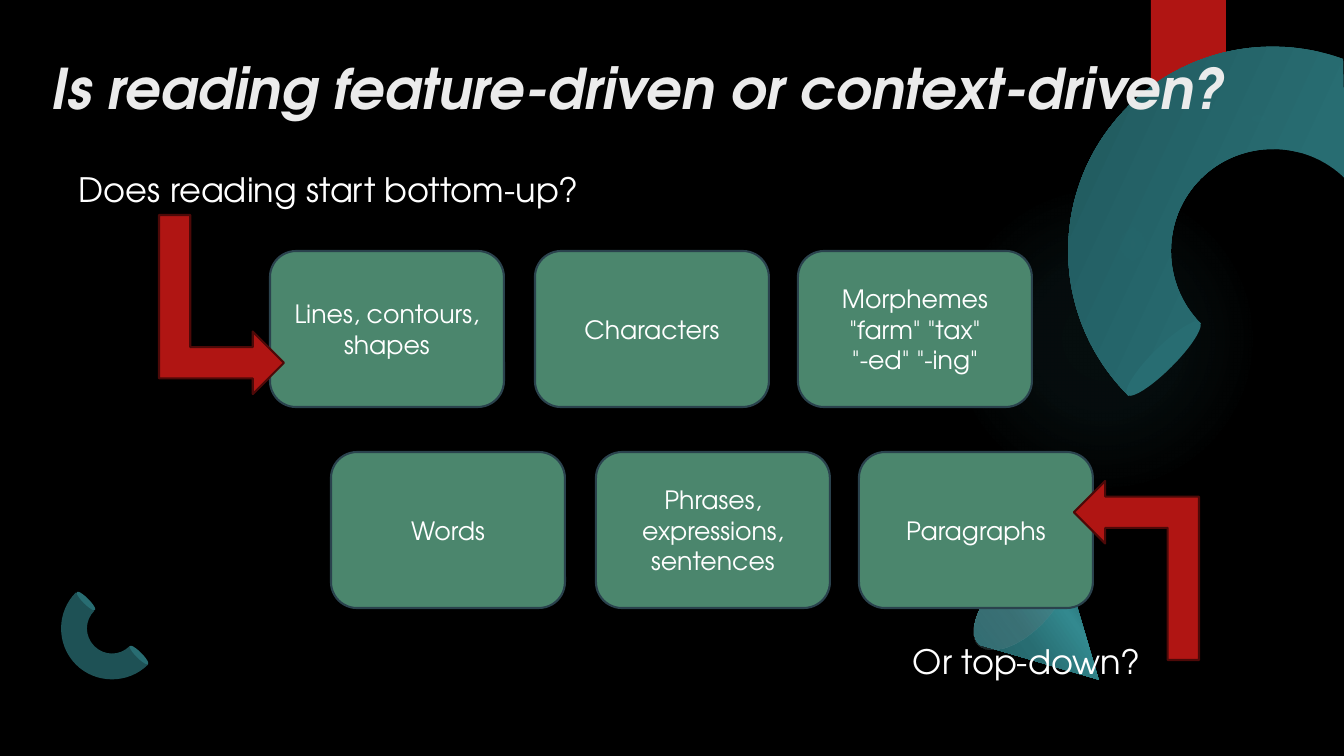
from dataclasses import dataclass
from math import cos, radians, sin, tan

from lxml import etree
from pptx import Presentation
from pptx.dml.color import RGBColor
from pptx.enum.shapes import MSO_SHAPE
from pptx.enum.text import MSO_ANCHOR, MSO_AUTO_SIZE, PP_ALIGN
from pptx.oxml import parse_xml
from pptx.oxml.ns import qn
from pptx.util import Inches, Pt

PX = Inches(1) / 100.8
OVAL, RECT = MSO_SHAPE.OVAL, MSO_SHAPE.RECTANGLE
CARD, BENT_ARROW = MSO_SHAPE.ROUNDED_RECTANGLE, MSO_SHAPE.BENT_UP_ARROW
TOP, MIDDLE = MSO_ANCHOR.TOP, MSO_ANCHOR.MIDDLE
LEFT, CENTER = PP_ALIGN.LEFT, PP_ALIGN.CENTER
NO_AUTOFIT = MSO_AUTO_SIZE.NONE
DRAWING_NS = "http://schemas.openxmlformats.org/drawingml/2006/main"


@dataclass(frozen=True)
class Theme:
    font: str = "TeX Gyre Adventor"
    title_size: int = 40
    question_size: int = 24
    card_size: int = 18
    background: str = "000000"
    title: str = "EBEBEB"
    text: str = "FFFFFF"
    card: str = "4B866D"
    card_line: str = "2A424D"
    red: str = "B01513"
    light_red: str = "ED5654"
    arrow_line: str = "4D0908"
    teal: str = "286D72"
    dark_teal: str = "1E5155"
    bright_teal: str = "33898F"
    cone_base: str = "38979E"
    glow: str = "50B9C1"
    highlight: str = "6DC5CB"


THEME = Theme()


def paint(shape, stops, angle=None, line=None, soft_edge=0):
    """Fill with (position, colour, opacity) stops: one is solid, no angle is radial."""
    colors = [
        f'<a:srgbClr val="{color}"><a:alpha val="{opacity * 1000}"/></a:srgbClr>'
        for _, color, opacity in stops
    ]
    if len(stops) == 1:
        fill = f'<a:solidFill xmlns:a="{DRAWING_NS}">{colors[0]}</a:solidFill>'
    else:
        marks = "".join(
            f'<a:gs pos="{stop[0] * 1000}">{color}</a:gs>' for stop, color in zip(stops, colors)
        )
        course = f'<a:lin ang="{(angle or 0) * 60000}" scaled="0"/>'
        if angle is None:
            course = (
                '<a:path path="circle">'
                '<a:fillToRect l="50000" t="50000" r="50000" b="50000"/></a:path>'
            )
        fill = f'<a:gradFill xmlns:a="{DRAWING_NS}"><a:gsLst>{marks}</a:gsLst>{course}</a:gradFill>'
    shape.fill.background()
    properties = shape._element.spPr
    properties.replace(properties.find(qn("a:noFill")), parse_xml(fill))
    if line:
        shape.line.color.rgb = RGBColor.from_string(line)
        shape.line.width = Pt(1.5)
    else:
        shape.line.fill.background()
    shape.shadow.inherit = False
    if soft_edge:
        effects = properties.find(qn("a:effectLst"))
        etree.SubElement(effects, qn("a:softEdge"), rad=str(round(soft_edge * PX)))


def arc(rx, ry, *angles):
    """Bezier curves around the origin through angles in degrees clockwise from the right."""
    curves = []
    for start, end in zip(map(radians, angles), map(radians, angles[1:])):
        pull = 4 / 3 * tan((end - start) / 4)
        curves.append([
            (rx * (cos(start) - pull * sin(start)), ry * (sin(start) + pull * cos(start))),
            (rx * (cos(end) + pull * sin(end)), ry * (sin(end) - pull * cos(end))),
            (rx * cos(end), ry * sin(end)),
        ])
    return curves


prs = Presentation()
prs.slide_width, prs.slide_height = round(1344 * PX), round(756 * PX)
slide = prs.slides.add_slide(prs.slide_layouts[5])
slide.background.fill.solid()
slide.background.fill.fore_color.rgb = RGBColor.from_string(THEME.background)

# Outlines start at their first point; three points make a curve, one makes a line
large_ring = [[(-204, 0)], *arc(204, 204, 180, 270, 335), [(102, 0)], *arc(102, 102, 360, 270, 180)]
small_ring = [[(51, 0)], *arc(51, 51, 0, 90, 180), [(-25, 0)], *arc(25, 25, 180, 90, 0)]
cone = [[(59, 0)], *arc(59, 30, 0, 90, 180), [(0, -109)]]

glow_stops = [(0, THEME.glow, 7), (36, THEME.glow, 6), (69, THEME.glow, 0)]
ring_stops = [(31, THEME.teal, 100), (97, THEME.dark_teal, 100)]
cone_stops = [
    (30, THEME.teal, 100),
    (40, THEME.bright_teal, 100),
    (60, THEME.teal, 100),
    (100, THEME.dark_teal, 100),
]
base_stops = [(0, THEME.cone_base, 33), (100, THEME.light_red, 0)]
cap_stops = [(0, THEME.teal, 100)]

# Each entry, back to front: preset or outline, box, rotation, stops, angle, soft edge
background_art = [
    (OVAL, (949, 184, 310, 310), 0, glow_stops, None, 0),
    (RECT, (1151, 0, 75, 126), 0, [(0, THEME.red, 100)], None, 0),
    (large_ring, (999, 83, 390, 205), 315, ring_stops, 250, 0),
    (large_ring, (1012, 83, 383, 239), 315, [(0, THEME.highlight, 40)], None, 50),
    (OVAL, (1152, 307, 23, 103), 225, cap_stops, None, 0),
    (cone, (990, 561, 119, 139), 135, cone_stops, 10, 0),
    (OVAL, (991, 543, 59, 119), 225, base_stops, 90, 0),
    (small_ring, (43, 621, 102, 51), 45, [(0, THEME.dark_teal, 100)], None, 0),
    (OVAL, (136, 642, 6, 26), 135, cap_stops, None, 0),
    (OVAL, (83, 588, 6, 26), 135, cap_stops, None, 0),
    (small_ring, (45, 614, 102, 58), 45, [(0, THEME.highlight, 20)], None, 13),
]
for form, box, rotation, stops, angle, soft_edge in background_art:
    box = [round(length * PX) for length in box]
    if isinstance(form, list):
        outline = slide.shapes.build_freeform(*form[0][0], scale=PX)
        for segment in form[1:]:
            outline.add_line_segments(segment, close=segment is form[-1])
        art = outline.convert_to_shape()
        art.left, art.top, art.width, art.height = box
        steps = list(art._element.iter(qn("a:lnTo")))
        for segment in form[1:]:
            corners, steps = steps[:len(segment)], steps[len(segment):]
            if len(segment) == 3:
                curve = etree.Element(qn("a:cubicBezTo"))
                corners[0].addprevious(curve)
                for corner in corners:
                    curve.append(corner[0])
                    corner.getparent().remove(corner)
    else:
        art = slide.shapes.add_shape(form, *box)
    art.rotation = rotation
    paint(art, stops, angle, soft_edge=soft_edge)

title = slide.shapes.title
title._element.getparent().append(title._element)
title.left, title.top, title.width, title.height = (
    round(length * PX) for length in (52, 53, 1202, 87)
)
title_frame = title.text_frame
title_frame.margin_left = title_frame.margin_right = 0
title_frame.margin_top = title_frame.margin_bottom = 0
title_frame.auto_size = NO_AUTOFIT
texts = [(title, "Is reading feature-driven or context-driven?",
          THEME.title_size, THEME.title, LEFT, TOP)]

# Reading levels: the second row is shifted to the right
reading_levels = [
    ["Lines, contours, shapes", "Characters", 'Morphemes\n"farm" "tax"\n"-ed" "-ing"'],
    ["Words", "Phrases, expressions, sentences", "Paragraphs"],
]
for row, levels in enumerate(reading_levels):
    for column_left, level in zip((270, 535, 798), levels):
        box = (column_left + 61 * row, 251 + 201 * row, 234, 156)
        card = slide.shapes.add_shape(CARD, *(round(length * PX) for length in box))
        paint(card, [(0, THEME.card, 100)], line=THEME.card_line)
        texts.append((card, level, THEME.card_size, THEME.text, CENTER, MIDDLE))

for question, box in [
    ("Does reading start bottom-up?", (69, 164, 584, 50)),
    ("Or top-down?", (903, 636, 430, 50)),
]:
    question_box = slide.shapes.add_textbox(*(round(length * PX) for length in box))
    texts.append((question_box, question, THEME.question_size, THEME.text, LEFT, TOP))

for holder, wording, size, color, alignment, anchor in texts:
    frame = holder.text_frame
    frame.word_wrap = True
    frame.vertical_anchor = anchor
    frame.text = wording
    for paragraph in frame.paragraphs:
        paragraph.alignment = alignment
        for run in paragraph.runs:
            run.font.name = THEME.font
            run.font.size = Pt(size)
            run.font.color.rgb = RGBColor.from_string(color)
            run.font.bold = run.font.italic = holder is title

for arrow_left, arrow_top, rotation in [(132, 242, 90), (1047, 508, 270)]:
    box = (arrow_left, arrow_top, 179, 125)
    arrow = slide.shapes.add_shape(BENT_ARROW, *(round(length * PX) for length in box))
    arrow.rotation = rotation
    paint(arrow, [(0, THEME.red, 100)], line=THEME.arrow_line)

prs.save("out.pptx")
